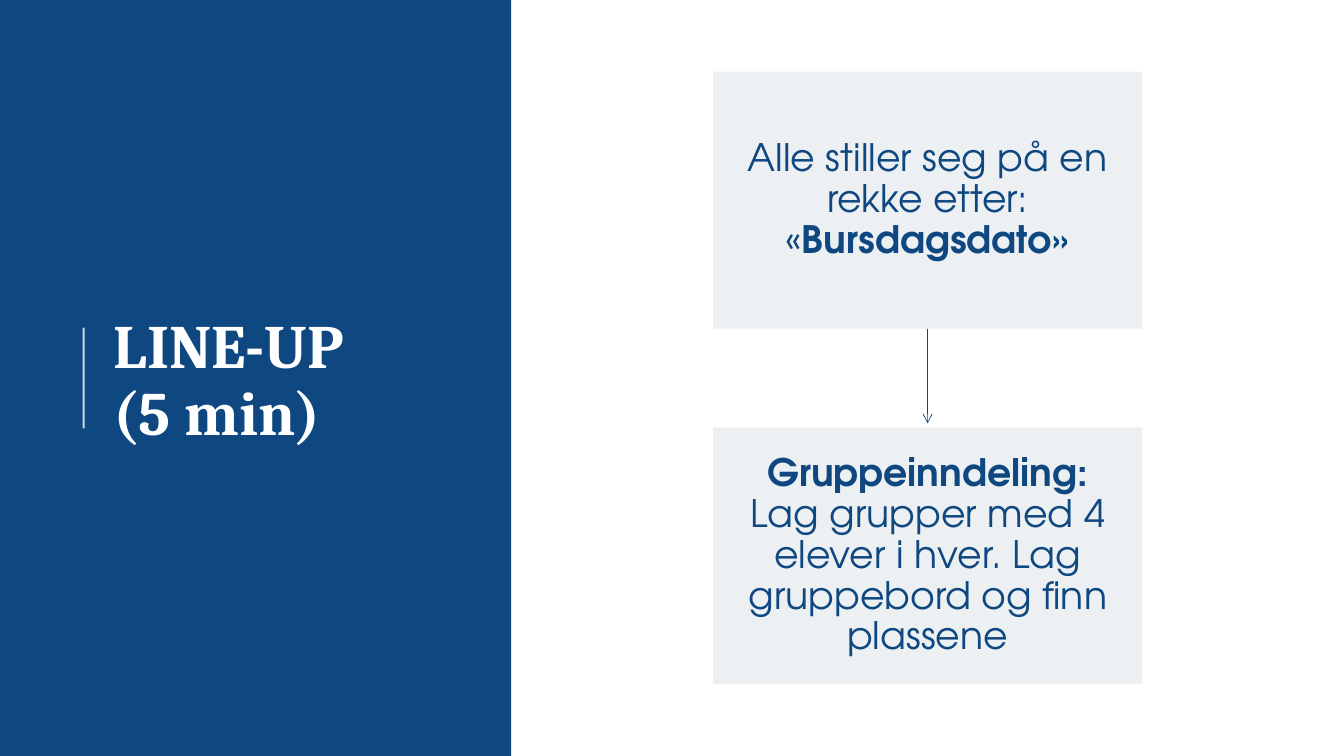
from lxml.etree import SubElement
from pptx import Presentation
from pptx.dml.color import RGBColor
from pptx.enum.shapes import MSO_CONNECTOR, MSO_SHAPE
from pptx.enum.text import MSO_ANCHOR, PP_ALIGN
from pptx.oxml.ns import qn
from pptx.util import Inches, Pt

TITLE = "LINE-UP\v(5 min)"
# Each step is a list of (words, bold)
STEPS = [
    [("Alle stiller seg på en rekke etter: «", False), ("Bursdagsdato»", True)],
    [("Gruppeinndeling:", True),
     (" Lag grupper med 4 elever i hver. Lag gruppebord og finn plassene", False)],
]
NAVY, PALE, WHITE = "0F4881", "EDF0F3", "FFFFFF"
SLIDE_W, SLIDE_H = 13.33, 7.5
PANEL_W = 5.07
STEP_LEFT, STEP_TOP, STEP_W, STEP_H, STEP_PITCH = 7.07, 0.71, 4.26, 2.55, 3.53
ARROW_LENGTH = 0.94
TITLE_FONT = {"name": "Cambria", "size": Pt(44), "bold": True}
STEP_FONT = {"name": "TeX Gyre Adventor", "size": Pt(27)}
STEP_FRAME = {
    "word_wrap": True, "vertical_anchor": MSO_ANCHOR.MIDDLE,
    "margin_left": Inches(0.21), "margin_right": Inches(0.21),
    "margin_top": Inches(0.22), "margin_bottom": Inches(0.22),
}
TITLE_FRAME = {"word_wrap": True, "vertical_anchor": MSO_ANCHOR.MIDDLE}


def set_all(target, values):
    for key, value in values.items():
        setattr(target, key, value)


def paint(color_format, color):
    color_format.rgb = RGBColor.from_string(color)


def add_block(slide, left, top, width, height, color):
    block = slide.shapes.add_shape(
        MSO_SHAPE.RECTANGLE, Inches(left), Inches(top), Inches(width), Inches(height))
    block.shadow.inherit = False
    block.fill.solid()
    paint(block.fill.fore_color, color)
    block.line.fill.background()
    return block


def add_vertical(slide, x, start, end, color, weight):
    """Draw a vertical line without a shadow and return it."""
    rule = slide.shapes.add_connector(
        MSO_CONNECTOR.STRAIGHT, Inches(x), Inches(start), Inches(x), Inches(end))
    paint(rule.line.color, color)
    rule.line.width = Pt(weight)
    SubElement(rule.element.spPr, qn("a:effectLst"))
    return rule


def write(frame, runs, frame_format, font_format, color, align):
    set_all(frame, frame_format)
    paragraph = frame.paragraphs[0]
    set_all(paragraph, {"alignment": align, "line_spacing": 0.9})
    set_all(paragraph.font, font_format)
    for words, bold in runs:
        for index, line in enumerate(words.split("\v")):
            if index:
                paragraph.add_line_break()
            run = paragraph.add_run()
            run.text = line
            set_all(run.font, {**font_format, "bold": bold})
            paint(run.font.color, color)


def main():
    deck = Presentation()
    deck.slide_width, deck.slide_height = Inches(SLIDE_W), Inches(SLIDE_H)
    slide = deck.slides.add_slide(deck.slide_layouts[6])

    add_block(slide, 0, 0, PANEL_W, SLIDE_H, NAVY)
    accent = add_vertical(slide, 0.83, 4.25, 3.25, WHITE, 1.5)
    accent_color = accent.line.fill.fore_color
    paint(accent_color, WHITE)
    SubElement(accent.element.spPr.find(".//" + qn("a:srgbClr")), qn("a:alpha"), val="80000")

    title = slide.shapes.add_textbox(Inches(1.03), Inches(0.78), Inches(3.69), Inches(6.02))
    write(title.text_frame, [(TITLE, True)], TITLE_FRAME, TITLE_FONT, WHITE, PP_ALIGN.LEFT)

    for index, step in enumerate(STEPS):
        top = STEP_TOP + index * STEP_PITCH
        block = add_block(slide, STEP_LEFT, top, STEP_W, STEP_H, PALE)
        write(block.text_frame, step, STEP_FRAME, STEP_FONT, NAVY, PP_ALIGN.CENTER)
        if index < len(STEPS) - 1:
            bottom = top + STEP_H
            arrow = add_vertical(slide, STEP_LEFT + STEP_W / 2, bottom,
                                 bottom + ARROW_LENGTH, NAVY, 0.5)
            SubElement(arrow.element.spPr.find(qn("a:ln")), qn("a:tailEnd"), type="arrow")

    deck.save("out.pptx")


if __name__ == "__main__":
    main()
